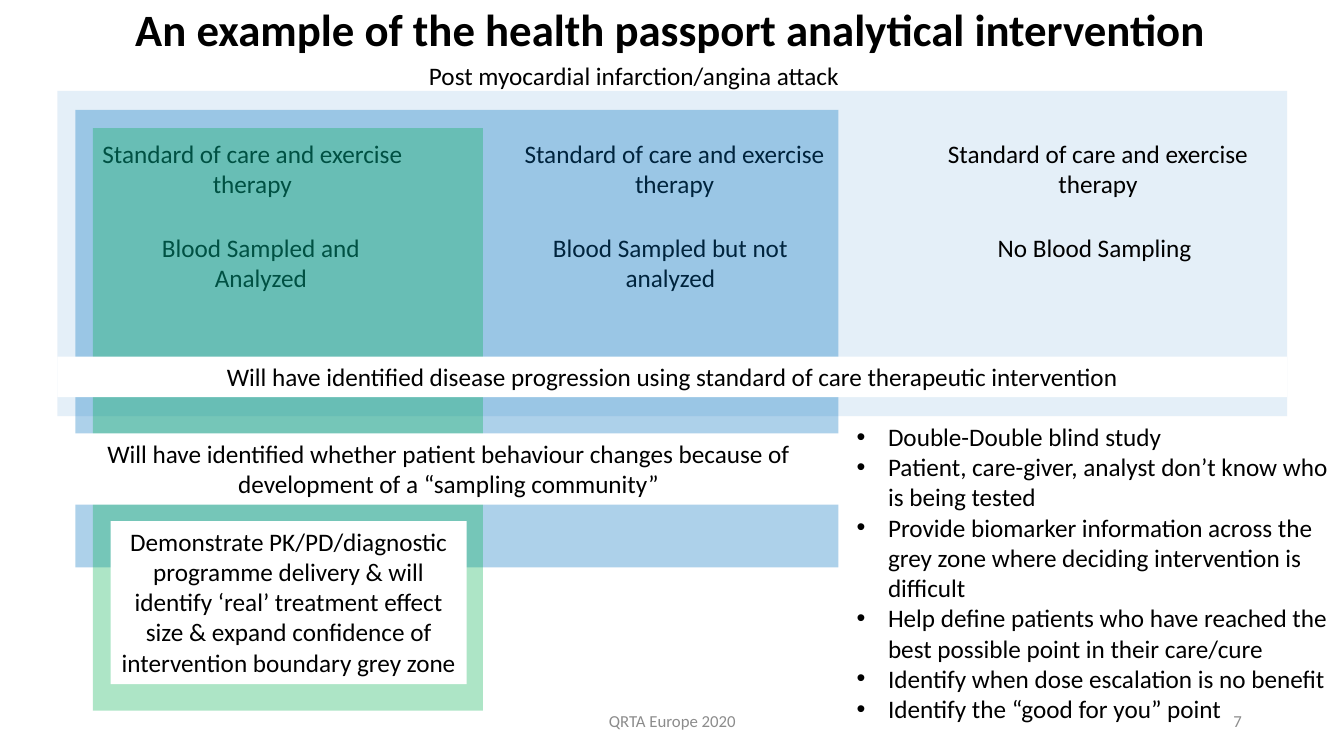
from dataclasses import dataclass

from lxml.etree import SubElement
from pptx import Presentation
from pptx.dml.color import RGBColor
from pptx.enum.shapes import MSO_SHAPE as Shape
from pptx.enum.text import MSO_ANCHOR as Anchor, PP_ALIGN as Align
from pptx.oxml.ns import qn
from pptx.util import Cm, Pt


@dataclass(frozen=True)
class Theme:
    font: str = "Calibri"
    title_size: int = 32
    body_size: int = 18
    footer_size: int = 12
    ink: str = "000000"
    muted: str = "8C8C8C"
    paper: str = "FFFFFF"
    pale_blue: str = "BDD7EE"
    blue: str = "0070C0"
    green: str = "00B050"


class SlideBuilder:
    def __init__(self, slide, theme):
        self.slide = slide
        self.theme = theme

    def set_text(self, shape, lines, size=None, color=None, align=Align.CENTER,
                 anchor=Anchor.TOP, bold=False):
        frame = shape.text_frame
        frame.word_wrap = True
        frame.vertical_anchor = anchor
        frame.text = "\n".join(lines)
        for paragraph in frame.paragraphs:
            paragraph.alignment = align
            for run in paragraph.runs:
                run.font.name = self.theme.font
                run.font.size = Pt(size or self.theme.body_size)
                run.font.bold = bold
                run.font.color.rgb = RGBColor.from_string(color or self.theme.ink)

    def text(self, box, *lines, **style):
        shape = self.slide.shapes.add_textbox(*map(Cm, box))
        self.set_text(shape, lines, **style)
        return shape

    def panel(self, box, color, opacity=100):
        shape = self.slide.shapes.add_shape(Shape.RECTANGLE, *map(Cm, box))
        shape.shadow.inherit = False
        shape.line.fill.background()
        shape.fill.solid()
        shape.fill.fore_color.rgb = RGBColor.from_string(color)
        if opacity < 100:
            color_node = shape._element.spPr.find(qn("a:solidFill"))[0]
            SubElement(color_node, qn("a:alpha"), val=str(opacity * 1000))
        return shape

    def outcome(self, box, message):
        self.set_text(self.panel(box, self.theme.paper), [message])

    def bullets(self, box, *lines):
        shape = self.text(box, *lines, align=Align.LEFT)
        indent = Cm(0.79)
        for paragraph in shape.text_frame.paragraphs:
            properties = paragraph._p.get_or_add_pPr()
            properties.set("marL", str(indent))
            properties.set("indent", str(-indent))
            SubElement(properties, qn("a:buFont"), typeface="Arial")
            SubElement(properties, qn("a:buChar"), char="•")


def main():
    theme = Theme()
    presentation = Presentation()
    presentation.slide_width, presentation.slide_height = Cm(33.87), Cm(19.05)
    slide = presentation.slides.add_slide(presentation.slide_layouts[6])
    builder = SlideBuilder(slide, theme)

    # All patients, with the heading
    builder.panel((1.45, 2.29, 30.99, 8.2), theme.pale_blue, 40)
    title = builder.text((0.48, 0.08, 32.84, 1.75),
                         "An example of the health passport analytical intervention",
                         size=theme.title_size, bold=True)
    title.text_frame.paragraphs[0].line_spacing = 0.9
    builder.text((10.36, 1.4, 11.23, 1.02), "Post myocardial infarction/angina attack")

    # Study arms: care left, sampling left, sampling text
    arms = [
        (1.98, 2.79, "Blood Sampled and Analyzed"),
        (12.62, 13.11, "Blood Sampled but not analyzed"),
        (23.29, 23.8, "No Blood Sampling"),
    ]
    for care_left, sampling_left, sampling in arms:
        builder.text((care_left, 3.35, 8.76, 1.8), "Standard of care and exercise therapy")
        builder.text((sampling_left, 5.72, 7.57, 1.8), sampling)

    # Overlays for the sampled and the analyzed arms
    builder.panel((1.9, 2.77, 19.23, 11.53), theme.blue, 32)
    builder.panel((2.34, 3.23, 9.83, 14.68), theme.green, 32)

    # Outcomes
    builder.outcome((2.79, 13.13, 8.97, 4.11),
                    "Demonstrate PK/PD/diagnostic programme delivery & will identify ‘real’ "
                    "treatment effect size & expand confidence of intervention boundary grey zone")
    builder.outcome((1.45, 8.99, 30.99, 1.02),
                    "Will have identified disease progression using standard of care "
                    "therapeutic intervention")
    builder.outcome((1.45, 10.92, 19.71, 1.8),
                    "Will have identified whether patient behaviour changes because of "
                    "development of a “sampling community”")

    # Study notes
    builder.bullets(
        (21.34, 10.49, 12.65, 7.95),
        "Double-Double blind study",
        "Patient, care-giver, analyst don’t know who is being tested",
        "Provide biomarker information across the grey zone where deciding intervention is difficult",
        "Help define patients who have reached the best possible point in their care/cure",
        "Identify when dose escalation is no benefit",
        "Identify the “good for you” point",
    )

    # Footer
    footer_style = dict(size=theme.footer_size, color=theme.muted, anchor=Anchor.MIDDLE)
    builder.text((11.23, 17.65, 11.43, 1.02), "QRTA Europe 2020", **footer_style)
    builder.text((23.93, 17.65, 7.62, 1.02), "7", align=Align.RIGHT, **footer_style)

    presentation.save("out.pptx")


if __name__ == "__main__":
    main()
